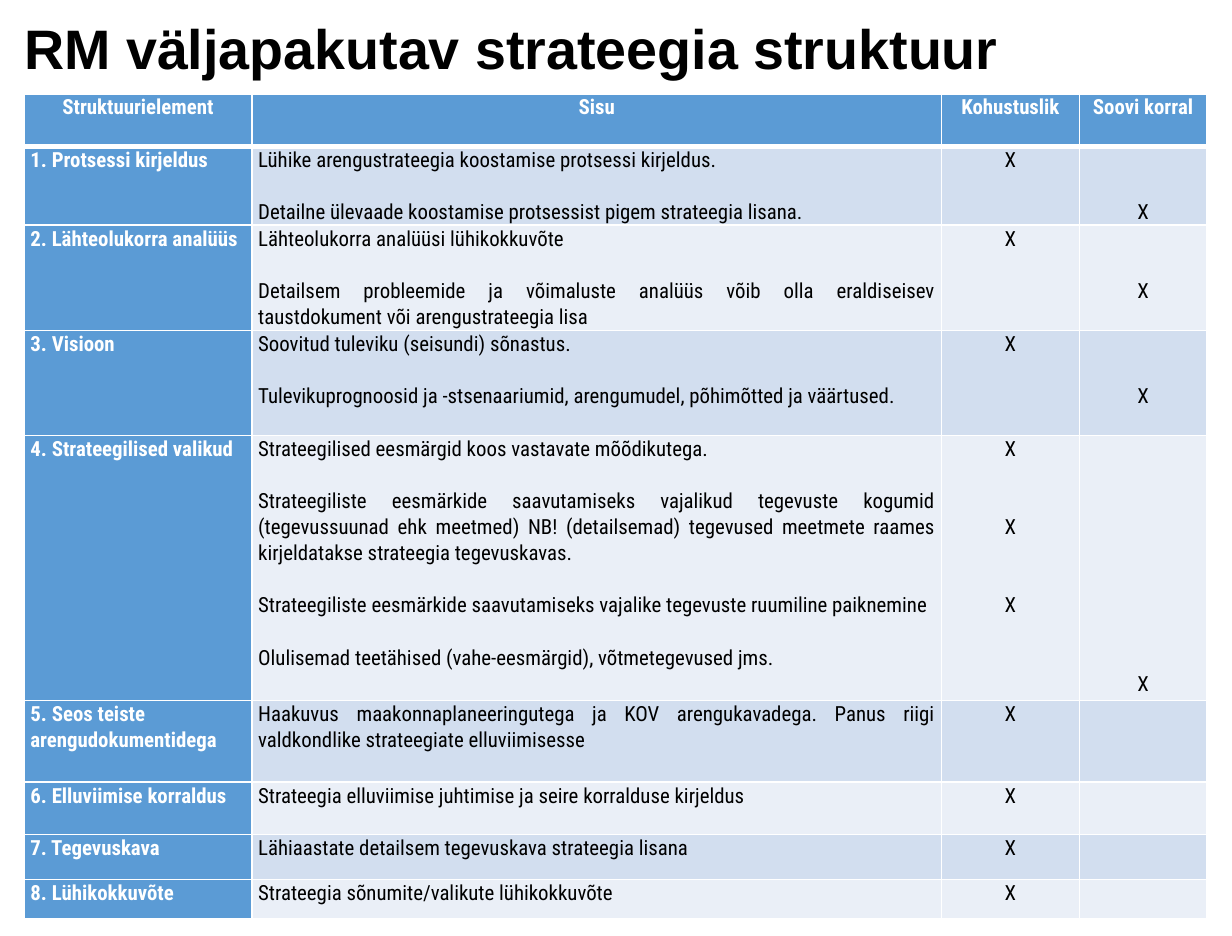
from lxml import etree
from pptx import Presentation, util as u
from pptx.dml.color import RGBColor
from pptx.enum import text as t
from pptx.oxml import ns

WIDE, HIGH = u.Cm(25), u.Cm(19)
LEFT, SPAN = u.Cm(0.49), u.Inches(9.45)
LINE = 0.21  # row grid: one line of table text, inches
PITCH = 15  # the same line, points
COLS = [1.82, 5.51, 1.1, 1.02]
ROWS = [2, 3, 4, 4, 10.1, 3.1, 2, 1.7, 1.5]
WHITE, BLACK, BLUE = "FFFFFF", "000000", "5B9BD5"
BANDS = ["D2DEEF", "EAEFF7"]

HEADS = ["Struktuurielement", "Sisu", "Kohustuslik", "Soovi korral"]
# name, contents, then the text lines marked in the last two columns
ITEMS = [
    ("1. Protsessi kirjeldus",
     ["Lühike arengustrateegia koostamise protsessi kirjeldus.",
      "Detailne ülevaade koostamise protsessist pigem strateegia lisana."],
     [0], [2]),
    ("2. Lähteolukorra analüüs",
     ["Lähteolukorra analüüsi lühikokkuvõte",
      "Detailsem probleemide ja võimaluste analüüs võib olla eraldiseisev "
      "taustdokument või arengustrateegia lisa"],
     [0], [2]),
    ("3. Visioon",
     ["Soovitud tuleviku (seisundi) sõnastus.",
      "Tulevikuprognoosid ja -stsenaariumid, arengumudel, põhimõtted ja väärtused."],
     [0], [2]),
    ("4. Strateegilised valikud",
     ["Strateegilised eesmärgid koos vastavate mõõdikutega.",
      "Strateegiliste eesmärkide saavutamiseks vajalikud tegevuste kogumid "
      "(tegevussuunad ehk meetmed) NB! (detailsemad) tegevused meetmete raames "
      "kirjeldatakse strateegia tegevuskavas.",
      "Strateegiliste eesmärkide saavutamiseks vajalike tegevuste ruumiline paiknemine",
      "Olulisemad teetähised (vahe-eesmärgid), võtmetegevused jms."],
     [0, 3, 6], [9]),
    ("5. Seos teiste arengudokumentidega",
     ["Haakuvus maakonnaplaneeringutega ja KOV arengukavadega. Panus riigi "
      "valdkondlike strateegiate elluviimisesse"],
     [0], []),
    ("6. Elluviimise korraldus",
     ["Strateegia elluviimise juhtimise ja seire korralduse kirjeldus"],
     [0], []),
    ("7. Tegevuskava",
     ["Lähiaastate detailsem tegevuskava strateegia lisana"],
     [0], []),
    ("8. Lühikokkuvõte",
     ["Strateegia sõnumite/valikute lühikokkuvõte"],
     [0], []),
]


def paint(part, tone):
    """Give a fill or a font its colour."""
    if hasattr(part, "solid"):
        part.solid()
        part.fore_color.rgb = RGBColor.from_string(tone)
    else:
        part.color.rgb = RGBColor.from_string(tone)


def style(para, face, size, tone, bold, align, space):
    para.alignment = align
    para.line_spacing = space
    for run in para.runs:
        run.font.name = face
        run.font.size = u.Pt(size)
        run.font.bold = bold
        paint(run.font, tone)


def edge(cell, row):
    """Draw white borders, thick between the header and the first item."""
    props = cell._tc.get_or_add_tcPr()
    for side in "LRTB":
        thick = (row, side) in [(0, "B"), (1, "T")]
        line = etree.SubElement(props, ns.qn("a:ln" + side),
                                w=str(u.Pt(3 if thick else 1)))
        fill = etree.SubElement(line, ns.qn("a:solidFill"))
        etree.SubElement(fill, ns.qn("a:srgbClr"), val=WHITE)


def write(cell, texts, gaps, tone, bold, align):
    """Write paragraphs, each with its own number of free lines above."""
    frame = cell.text_frame
    frame.text = "\n".join(texts)
    for para, gap in zip(frame.paragraphs, gaps):
        style(para, "Roboto Condensed", 12, tone, bold, align, 1.07)
        para.space_before = u.Pt(gap * PITCH)


def mark(cell, lines):
    """Put an X on each of the given text lines."""
    if not lines:
        return
    cell.margin_top = u.Pt(lines[0] * PITCH)
    gaps = [0] + [b - a - 1 for a, b in zip(lines, lines[1:])]
    write(cell, ["X"] * len(lines), gaps, BLACK, False, t.PP_ALIGN.CENTER)


def add_title(slide, words):
    title = slide.shapes.title
    title.left, title.top = LEFT, u.Inches(0.12)
    title.width, title.height = SPAN, u.Inches(0.47)
    frame = title.text_frame
    frame.text = words
    frame.word_wrap = True
    frame.auto_size = t.MSO_AUTO_SIZE.NONE
    frame.vertical_anchor = t.MSO_ANCHOR.TOP
    frame.margin_left = frame.margin_right = frame.margin_bottom = 0
    frame.margin_top = u.Inches(0.06)
    style(frame.paragraphs[0], "Arial", 32, BLACK, True, t.PP_ALIGN.LEFT, 0.88)


def add_grid(slide):
    """Add the empty table with its sizes, fills and borders."""
    table = slide.shapes.add_table(
        len(ROWS), len(COLS), LEFT, u.Inches(0.75),
        SPAN, u.Inches(sum(ROWS) * LINE)).table
    for col, width in zip(table.columns, COLS):
        col.width = u.Inches(width)
    for r, lines in enumerate(ROWS):
        table.rows[r].height = u.Inches(lines * LINE)
        for c, cell in enumerate(table.rows[r].cells):
            cell.margin_left = cell.margin_right = u.Inches(0.05)
            cell.margin_top = cell.margin_bottom = 0
            edge(cell, r)
            paint(cell.fill, BLUE if r == 0 or c == 0 else BANDS[(r - 1) % 2])
    return table


def fill_grid(table):
    for cell, head in zip(table.rows[0].cells, HEADS):
        write(cell, [head], [0], WHITE, True, t.PP_ALIGN.CENTER)
    for r, (name, texts, must, wish) in enumerate(ITEMS, 1):
        cells = list(table.rows[r].cells)
        write(cells[0], [name], [0], WHITE, True, t.PP_ALIGN.LEFT)
        gaps = [0] + [1] * (len(texts) - 1)
        write(cells[1], texts, gaps, BLACK, False, t.PP_ALIGN.JUSTIFY)
        mark(cells[2], must)
        mark(cells[3], wish)


def main():
    deck = Presentation()
    deck.slide_width, deck.slide_height = WIDE, HIGH
    slide = deck.slides.add_slide(deck.slide_layouts[5])
    paint(slide.background.fill, WHITE)
    add_title(slide, "RM väljapakutav strateegia struktuur")
    fill_grid(add_grid(slide))
    deck.save("out.pptx")


if __name__ == "__main__":
    main()
